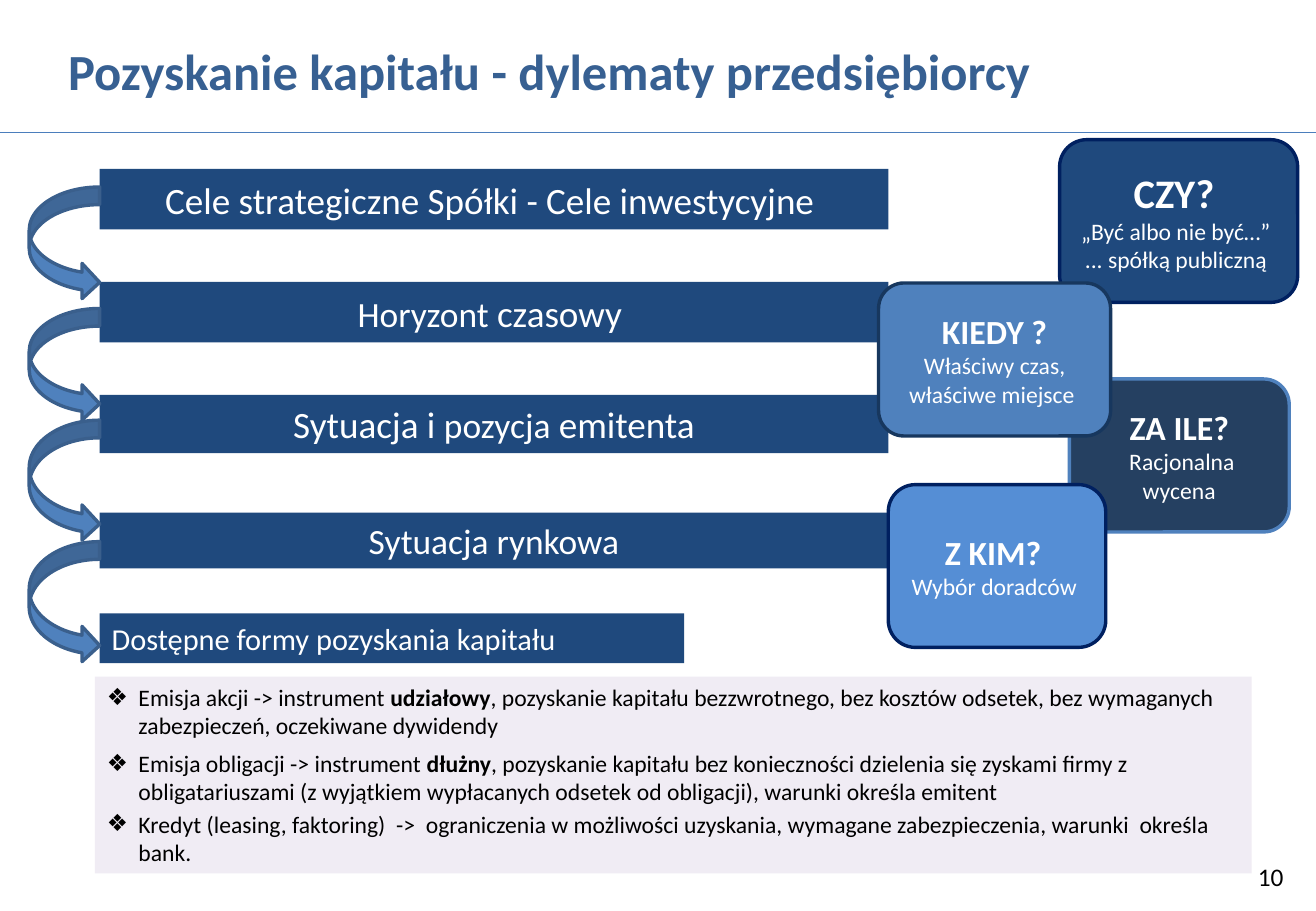
from lxml.etree import SubElement
from pptx import Presentation
from pptx.dml.color import RGBColor
from pptx.enum.shapes import MSO_CONNECTOR, MSO_SHAPE
from pptx.enum.text import MSO_ANCHOR, MSO_AUTO_SIZE, PP_ALIGN
from pptx.oxml.ns import qn
from pptx.util import Pt

PX = 9144  # one px is a hundredth of an inch

THEME = {
    "font": "Calibri",
    "white": "FFFFFF", "black": "000000", "title": "376092", "rule": "4B7EBC",
    "bar": "1F497D", "arrow": "4F81BD", "arrow_line": "3A5F8C", "panel": "F0ECF4",
    "card_dark": "254061", "card_mid": "4F81BD", "card_light": "558ED5",
    "navy": "002060", "steel": "17375E",
    "title_size": 30, "bar_size": 22, "bar_small": 21, "forms_size": 18,
    "card_big": 24, "card_head": 20, "body_size": 14, "number_size": 15,
}


def color(name):
    return RGBColor.from_string(THEME[name])


def style(paragraph, size, ink, align=PP_ALIGN.LEFT, bold=False):
    paragraph.alignment = align
    font = paragraph.font
    font.name, font.size, font.bold = THEME["font"], Pt(THEME[size]), bold
    font.color.rgb = color(ink)


def add_block(kind, left, top, width, height, fill, line=None):
    shape = slide.shapes.add_shape(kind, left * PX, top * PX, width * PX, height * PX)
    shape.shadow.inherit = False
    shape.fill.solid()
    shape.fill.fore_color.rgb = color(fill)
    if line:
        shape.line.color.rgb = color(line)
        shape.line.width = Pt(2)
    else:
        shape.line.fill.background()
    shape.text_frame.vertical_anchor = MSO_ANCHOR.MIDDLE
    return shape


presentation = Presentation()
presentation.slide_width, presentation.slide_height = 1083 * PX, 750 * PX
slide = presentation.slides.add_slide(presentation.slide_layouts[1])
title, body = slide.placeholders

# Title and the rule below it
title.left, title.top, title.width, title.height = 46 * PX, 0, 819 * PX, 115 * PX
title.text_frame.auto_size = MSO_AUTO_SIZE.NONE
title.text_frame.vertical_anchor = MSO_ANCHOR.MIDDLE
title.text_frame.text = "Pozyskanie kapitału - dylematy przedsiębiorcy"
style(title.text_frame.paragraphs[0], "title_size", "title", bold=True)

rule = slide.shapes.add_connector(MSO_CONNECTOR.STRAIGHT, 0, 109 * PX, 1083 * PX, 109 * PX)
rule.line.color.rgb = color("rule")
rule.line.width = Pt(1)
SubElement(rule._element.spPr, qn("a:effectLst"))

# Forms of capital: text before, bold word, text after, space after in points
forms = [
    ("Emisja akcji -> instrument ", "udziałowy",
     ", pozyskanie kapitału bezzwrotnego, bez kosztów odsetek, bez wymaganych "
     "zabezpieczeń, oczekiwane dywidendy", 5.5),
    ("Emisja obligacji -> instrument ", "dłużny",
     ", pozyskanie kapitału bez konieczności dzielenia się zyskami firmy z "
     "obligatariuszami (z wyjątkiem wypłacanych odsetek od obligacji), "
     "warunki określa emitent", 2.5),
    ("Kredyt (leasing, faktoring)  ->  ograniczenia w możliwości uzyskania, "
     "wymagane zabezpieczenia, warunki  określa bank.", "", "", 0),
]
body.left, body.top, body.width, body.height = 78 * PX, 557 * PX, 952 * PX, 162 * PX
body.fill.solid()
body.fill.fore_color.rgb = color("panel")
frame = body.text_frame
frame.auto_size = MSO_AUTO_SIZE.NONE
frame.vertical_anchor = MSO_ANCHOR.TOP
for index, (before, strong, after, gap) in enumerate(forms):
    paragraph = frame.add_paragraph() if index else frame.paragraphs[0]
    properties = paragraph._p.get_or_add_pPr()
    properties.set("marL", str(26 * PX))
    properties.set("indent", str(-26 * PX))
    SubElement(properties, qn("a:buChar")).set("char", "❖")
    style(paragraph, "body_size", "black")
    paragraph.space_before, paragraph.space_after = Pt(0), Pt(gap)
    for text in filter(None, (before, strong, after)):
        run = paragraph.add_run()
        run.text = text
        if text == strong:
            run.font.bold = True

# Steps: top, height, width, alignment, runs of text and size
CENTER, LEFT = PP_ALIGN.CENTER, PP_ALIGN.LEFT
steps = [
    (139, 50, 649, CENTER, [("Cele strategiczne Spółki - Cele inwestycyjne ", "bar_size")]),
    (232, 50, 649, CENTER, [("Horyzont", "bar_small"), (" czasowy ", "bar_size")]),
    (325, 48, 649, CENTER, [("Sytuacja i ", "bar_size"), ("pozycja", "bar_small"),
                            (" emitenta", "bar_size")]),
    (422, 46, 649, CENTER, [("Sytuacja rynkowa", "bar_small")]),
    (505, 41, 481, LEFT, [("Dostępne formy pozyskania kapitału", "forms_size")]),
]
for top, height, width, align, runs in steps:
    bar = add_block(MSO_SHAPE.RECTANGLE, 82, top, width, height, "bar")
    paragraph = bar.text_frame.paragraphs[0]
    base_size = runs[0][1]
    style(paragraph, base_size, "white", align)
    for text, size in runs:
        run = paragraph.add_run()
        run.text = text
        if size != base_size:
            run.font.size = Pt(THEME[size])

# Arrows from each step to the next
for top, height in [(154, 93), (254, 93), (346, 100), (446, 100)]:
    add_block(MSO_SHAPE.CURVED_RIGHT_ARROW, 24, top, 58, height, "arrow", "arrow_line")

# Question cards, back to front
cards = [
    (880, 312, 181, 126, "card_dark", "card_mid", "ZA ILE?", "card_head",
     " Racjonalna wycena"),
    (872, 115, 196, 134, "bar", "navy", "CZY? ", "card_big",
     "„Być albo nie być…” \n... spółką publiczną "),
    (723, 233, 191, 126, "card_mid", "steel", "KIEDY ?", "card_head",
     "Właściwy czas, właściwe miejsce "),
    (731, 399, 179, 134, "card_light", "navy", "Z KIM? ", "card_head",
     "Wybór doradców "),
]
for left, top, width, height, fill, line, question, size, answer in cards:
    card = add_block(MSO_SHAPE.ROUNDED_RECTANGLE, left, top, width, height, fill, line)
    heading = card.text_frame.paragraphs[0]
    heading.text = question
    style(heading, size, "white", CENTER, bold=True)
    detail = card.text_frame.add_paragraph()
    detail.text = answer
    style(detail, "body_size", "white", CENTER)

# Slide number
number = slide.shapes.add_textbox(848 * PX, 704 * PX, 218 * PX, 36 * PX)
number.text_frame.word_wrap = True
number.text_frame.text = "10"
style(number.text_frame.paragraphs[0], "number_size", "black", PP_ALIGN.RIGHT)

presentation.save("out.pptx")
